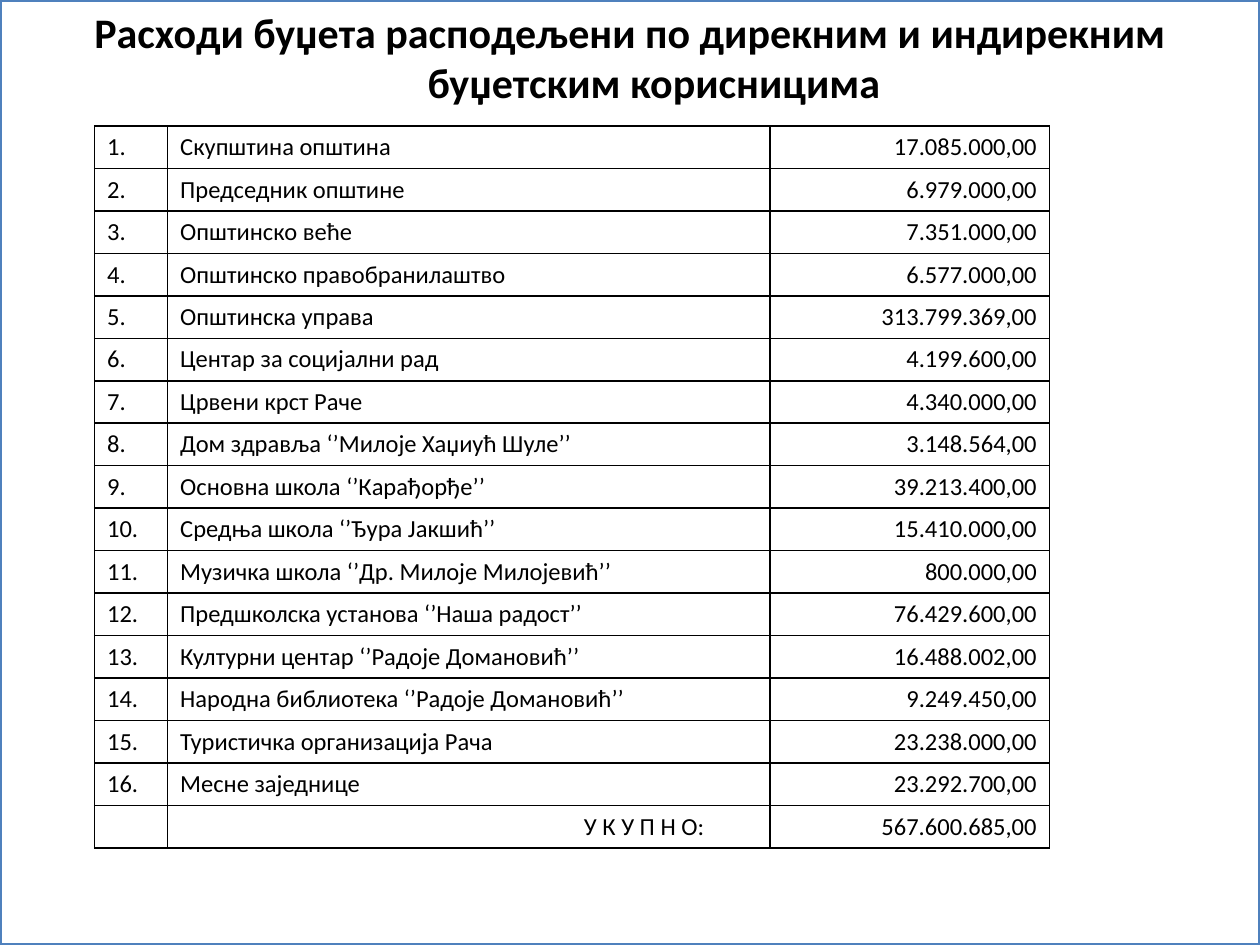
from lxml import etree
from pptx import Presentation
from pptx import util as u
from pptx.dml.color import RGBColor
from pptx.enum import text
from pptx.oxml.ns import qn

BLACK = RGBColor(0x00, 0x00, 0x00)
WHITE = RGBColor(0xFF, 0xFF, 0xFF)
BLUE = RGBColor(0x4F, 0x81, 0xBD)

HEADING = "Расходи буџета расподељени по дирекним и индирекним буџетским корисницима"
EXPENSES = [
    ("Скупштина општина", "17.085.000,00"),
    ("Председник општине", "6.979.000,00"),
    ("Општинско веће", "7.351.000,00"),
    ("Општинско правобранилаштво", "6.577.000,00"),
    ("Општинска управа", "313.799.369,00"),
    ("Центар за социјални рад", "4.199.600,00"),
    ("Црвени крст Раче", "4.340.000,00"),
    ("Дом здравља ‘’Милоје Хаџиућ Шуле’’", "3.148.564,00"),
    ("Основна школа ‘’Карађорђе’’", "39.213.400,00"),
    ("Средња школа ‘’Ђура Јакшић’’", "15.410.000,00"),
    ("Музичка школа ‘’Др. Милоје Милојевић’’", "800.000,00"),
    ("Предшколска установа ‘’Наша радост’’", "76.429.600,00"),
    ("Културни центар ‘’Радоје Домановић’’", "16.488.002,00"),
    ("Народна библиотека ‘’Радоје Домановић’’", "9.249.450,00"),
    ("Туристичка организација Рача", "23.238.000,00"),
    ("Месне заједнице", "23.292.700,00"),
]
TOTAL = ("У К У П Н О:", "567.600.685,00")

LEFT, CENTER, RIGHT = text.PP_ALIGN.LEFT, text.PP_ALIGN.CENTER, text.PP_ALIGN.RIGHT


class BudgetPage:
    """Style and current slide; lengths are units of a 100 x 75 grid."""

    COLUMNS, ROWS = 100, 75
    HEADING_FONT = {"name": "Calibri", "size": u.Pt(24), "bold": True}
    CELL_FONT = {"name": "Calibri", "size": u.Pt(14), "bold": False}

    def __init__(self, deck):
        self.page = deck.slides.add_slide(deck.slide_layouts.get_by_name("Title Only"))
        self.column = deck.slide_width / self.COLUMNS
        self.row = deck.slide_height / self.ROWS

    def frame(self, left, top, width, height):
        return (int(left * self.column), int(top * self.row),
                int(width * self.column), int(height * self.row))

    def add_words(self, para, words, style, align):
        para.alignment = align
        span = para.add_run()
        span.text = words
        for name, value in style.items():
            setattr(span.font, name, value)
        span.font.color.rgb = BLACK

    def heading(self, words):
        """Fill the whole page with the bordered title box."""
        box = self.page.shapes.title
        box.left, box.top, box.width, box.height = self.frame(0, 0, self.COLUMNS, self.ROWS)
        box.fill.solid()
        box.fill.fore_color.rgb = WHITE
        box.line.color.rgb = BLUE
        box.line.width = u.Pt(2)
        layout = {"vertical_anchor": text.MSO_ANCHOR.TOP, "word_wrap": True,
                  "auto_size": text.MSO_AUTO_SIZE.NONE}
        for name, value in layout.items():
            setattr(box.text_frame, name, value)
        para = box.text_frame.paragraphs[0]
        para.space_before = u.Pt(5)
        hanging = u.Inches(0.38)
        properties = para._p.get_or_add_pPr()
        properties.set("marL", str(hanging))
        properties.set("indent", str(-hanging))
        self.add_words(para, words, self.HEADING_FONT, CENTER)

    def borders(self, cell):
        properties = cell._tc.get_or_add_tcPr()
        for side in ("lnL", "lnR", "lnT", "lnB"):
            line = etree.SubElement(properties, qn(f"a:{side}"), w=str(u.Pt(1)))
            fill = etree.SubElement(line, qn("a:solidFill"))
            etree.SubElement(fill, qn("a:srgbClr"), val=str(BLACK))

    def table(self, rows, left, top, widths, height, aligns):
        area = self.frame(left, top, sum(widths), height)
        table = self.page.shapes.add_table(len(rows), len(widths), *area).table
        table.first_row = table.horz_banding = False
        for column, width in zip(table.columns, widths):
            column.width = int(width * self.column)
        for r, values in enumerate(rows):
            for c, (value, align) in enumerate(zip(values, aligns)):
                cell = table.cell(r, c)
                self.borders(cell)
                cell.fill.background()
                para = cell.text_frame.paragraphs[0]
                para.font.size = self.CELL_FONT["size"]
                if value:
                    self.add_words(para, value, self.CELL_FONT, align)
        return table


def main():
    deck = Presentation()
    deck.slide_width, deck.slide_height = u.Inches(10), u.Inches(7.5)
    page = BudgetPage(deck)
    page.heading(HEADING)
    rows = [(f"{number}.", *expense) for number, expense in enumerate(EXPENSES, 1)]
    rows.append(("", *TOTAL))
    table = page.table(rows, left=7.5, top=10, widths=(5.8, 47.8, 22.2),
                       height=56.7, aligns=(LEFT, LEFT, RIGHT))
    total_label = table.cell(len(EXPENSES), 1)
    total_label.text_frame.paragraphs[0].alignment = RIGHT
    total_label.margin_right = u.Inches(0.52)
    deck.save("out.pptx")


if __name__ == "__main__":
    main()
